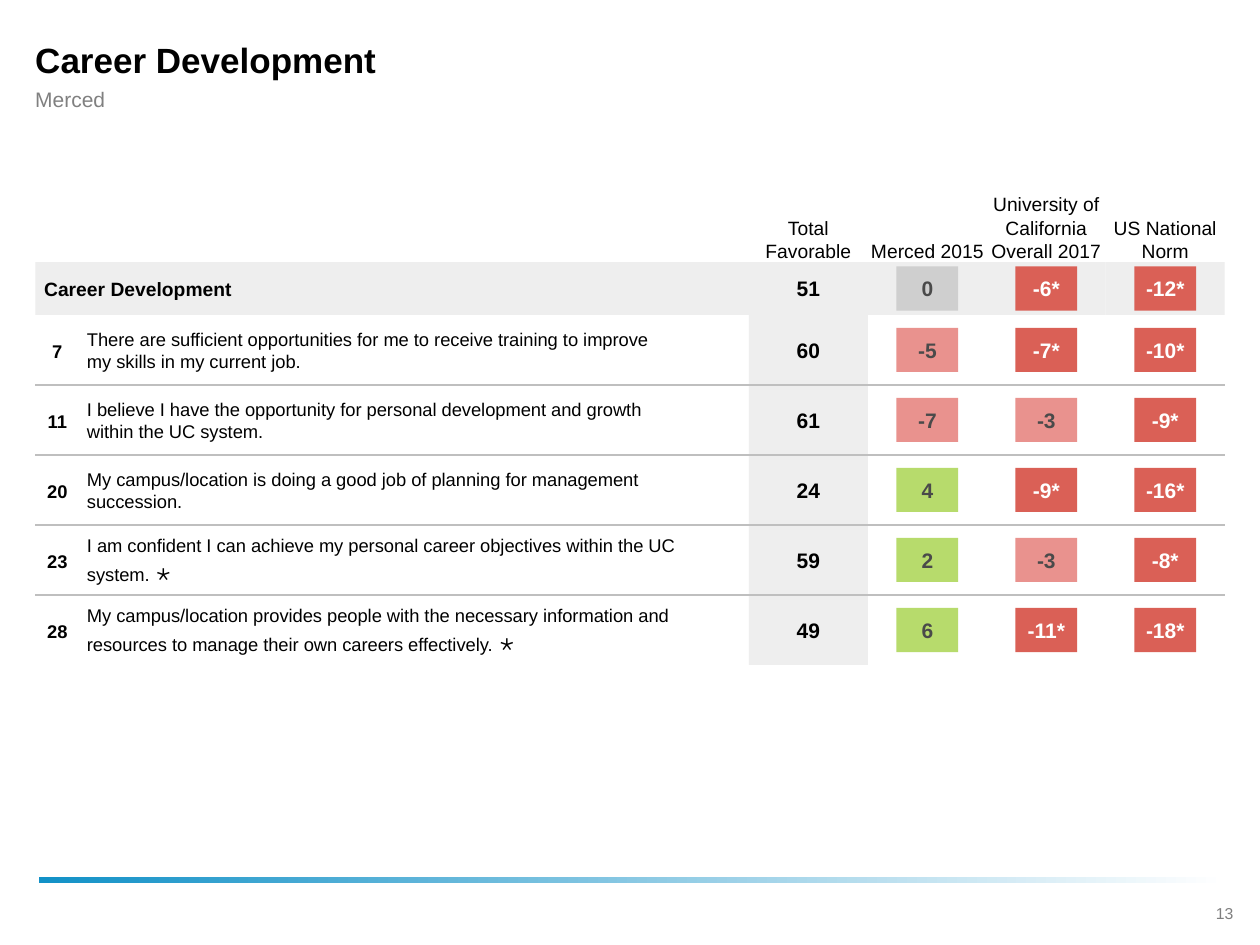
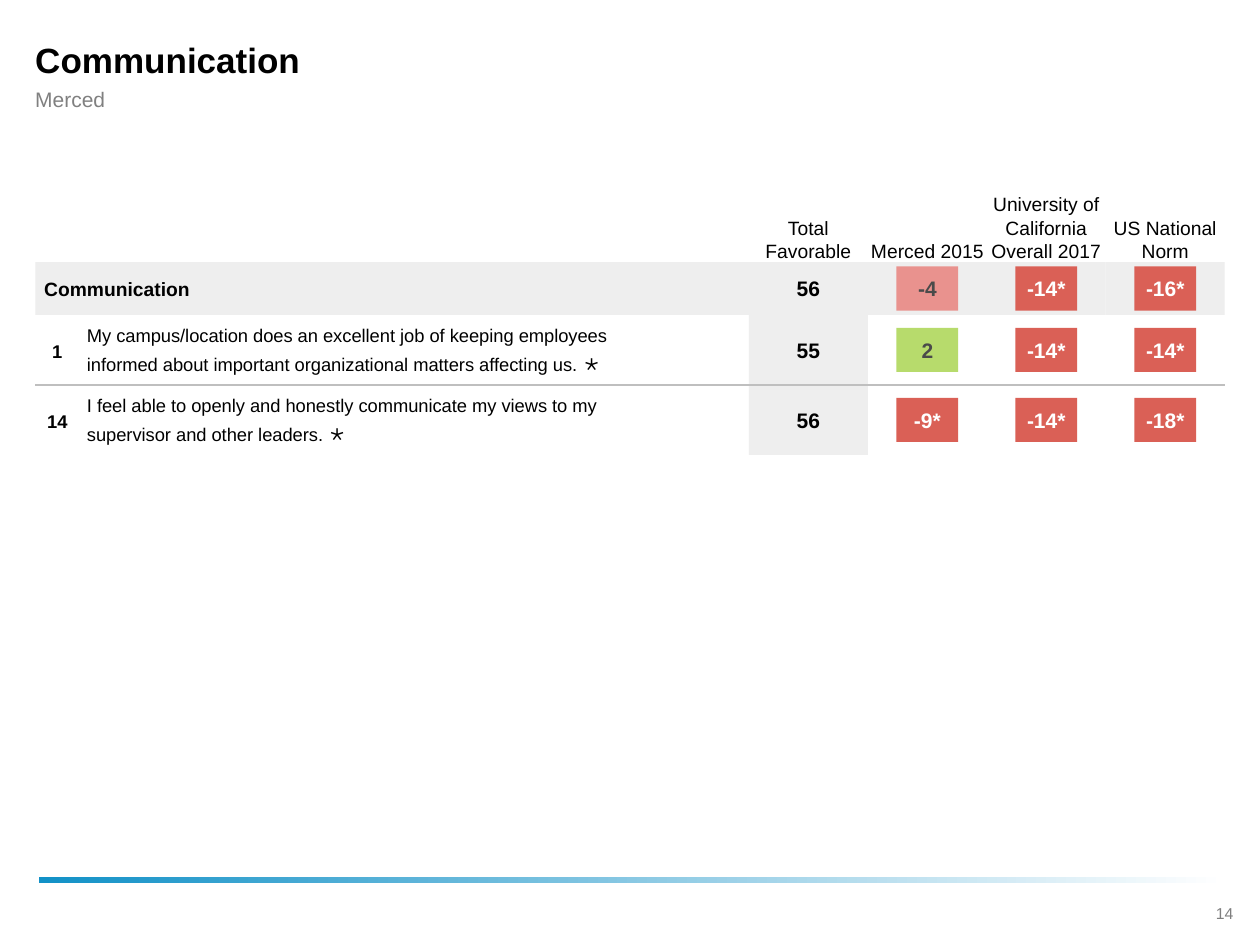
from collections import namedtuple

from pptx import Presentation
from pptx.dml.color import RGBColor
from pptx.enum.shapes import MSO_CONNECTOR as Connector, MSO_SHAPE as Shape
from pptx.enum.text import MSO_ANCHOR as Anchor, PP_ALIGN as Align
from pptx.oxml.ns import qn
from pptx.util import Inches, Pt
from lxml.etree import SubElement

FONT = "Arial"
COLORS = {
    "text": "000000",
    "subtitle": "808080",
    "page_number": "7F7F7F",
    "band": "EEEEEE",
    "rule": "BFBFBF",
    "accent": "1291C7",
    "white": "FFFFFF",
    "tile_text": "4A4A4A",
    "neutral": "CFCFCF",
    "above": "B7DB6C",
    "below": "E9928E",
    "far_below": "DA6056",
}

Box = namedtuple("Box", "left top width height")
Question = namedtuple("Question", "number text starred scores")

PAGE_BOX = Box(0.28, 0.28, 9.44, 6.73)
SCORES_BOX = Box(0.28, 0.97, 9.44, 5.5)
FOOTER_BOX = Box(0.31, 6.96, 9.42, 0.41)

# The score grid: ten column units, the last four of them hold scores
COLUMN_UNITS = 10
LABEL_UNITS = 6
HEADING_HEIGHT = 1.11
SUMMARY_HEIGHT = 0.42
ROW_HEIGHT = 5 / 9
TILE_WIDTH, TILE_HEIGHT = 0.49, 0.35

HEADINGS = ["Total Favorable", "Merced 2015",
            "University of California Overall 2017", "US National Norm"]

TOPICS = [
    (13, "Career Development", ["51", "0", "-6*", "-12*"], [
        Question("7", "There are sufficient opportunities for me to receive "
                 "training to improve my skills in my current job.",
                 False, ["60", "-5", "-7*", "-10*"]),
        Question("11", "I believe I have the opportunity for personal "
                 "development and growth within the UC system.",
                 False, ["61", "-7", "-3", "-9*"]),
        Question("20", "My campus/location is doing a good job of planning "
                 "for management succession.",
                 False, ["24", "4", "-9*", "-16*"]),
        Question("23", "I am confident I can achieve my personal career "
                 "objectives within the UC system.",
                 True, ["59", "2", "-3", "-8*"]),
        Question("28", "My campus/location provides people with the necessary "
                 "information and resources to manage their own careers "
                 "effectively.",
                 True, ["49", "6", "-11*", "-18*"]),
    ]),
    (14, "Communication", ["56", "-4", "-14*", "-16*"], [
        Question("1", "My campus/location does an excellent job of keeping "
                 "employees informed about important organizational matters "
                 "affecting us.",
                 True, ["55", "2", "-14*", "-14*"]),
        Question("14", "I feel able to openly and honestly communicate my "
                 "views to my supervisor and other leaders.",
                 True, ["56", "-9*", "-14*", "-18*"]),
    ]),
]


def color(name):
    return RGBColor.from_string(COLORS[name])


def lengths(box):
    return [Inches(value) for value in box]


def add_run(paragraph, text, size, color_name="text", bold=False):
    run = paragraph.add_run()
    run.text = text
    run.font.name = FONT
    run.font.size = Pt(size)
    run.font.bold = bold
    run.font.color.rgb = color(color_name)


def set_frame(shape, insets, anchor, align, wrap=True):
    """Prepare the text frame of a shape and return its first paragraph."""
    frame = shape.text_frame
    frame.word_wrap = wrap
    frame.vertical_anchor = anchor
    (frame.margin_left, frame.margin_top,
     frame.margin_right, frame.margin_bottom) = lengths(insets)
    paragraph = frame.paragraphs[0]
    paragraph.alignment = align
    return paragraph


def add_text(slide, box, text, size, color_name="text", bold=False,
             align=Align.LEFT, anchor=Anchor.MIDDLE, insets=(0, 0, 0, 0)):
    shape = slide.shapes.add_textbox(*lengths(box))
    paragraph = set_frame(shape, insets, anchor, align)
    add_run(paragraph, text, size, color_name, bold)
    return paragraph


def add_rectangle(slide, box, color_name):
    shape = slide.shapes.add_shape(Shape.RECTANGLE, *lengths(box))
    shape.shadow.inherit = False
    shape.line.fill.background()
    shape.fill.solid()
    shape.fill.fore_color.rgb = color(color_name)
    return shape


def add_rule(slide, left, right, y):
    rule = slide.shapes.add_connector(
        Connector.STRAIGHT, Inches(left), Inches(y), Inches(right), Inches(y))
    rule.line.color.rgb = color("rule")
    rule.line.width = Pt(0.75)
    SubElement(rule.element.spPr, qn("a:effectLst"))


def centered(cell, width, height):
    return Box(cell.left + (cell.width - width) / 2,
               cell.top + (cell.height - height) / 2, width, height)


def column_cells(box, top, height):
    """Return the label cell and the score cells of one row of the grid."""
    unit = box.width / COLUMN_UNITS
    label = Box(box.left, top, LABEL_UNITS * unit, height)
    cells = [Box(box.left + index * unit, top, unit, height)
             for index in range(LABEL_UNITS, COLUMN_UNITS)]
    return label, cells


def tile_color(score):
    if score.endswith("*"):
        return "far_below"
    value = int(score)
    if value == 0:
        return "neutral"
    return "above" if value > 0 else "below"


def add_tile(slide, cell, score):
    fill = tile_color(score)
    tile = add_rectangle(slide, centered(cell, TILE_WIDTH, TILE_HEIGHT), fill)
    paragraph = set_frame(tile, (0, 0.05, 0, 0.05), Anchor.MIDDLE,
                          Align.CENTER, wrap=False)
    text_color = "white" if fill == "far_below" else "tile_text"
    add_run(paragraph, score, 12, text_color, bold=True)


def add_scores(slide, cells, scores):
    favorable = centered(cells[0], cells[0].width, 0.19)
    add_text(slide, favorable, scores[0], 12, bold=True, align=Align.CENTER)
    for cell, score in zip(cells[1:], scores[1:]):
        add_tile(slide, cell, score)


def add_footer(slide, box, page_number):
    # Fading bar
    bar = add_rectangle(slide, box._replace(height=0.05), "accent")
    bar.fill.gradient()
    bar.fill.gradient_angle = 0
    for stop, name in zip(bar.fill.gradient_stops, ["accent", "white"]):
        stop.color.rgb = color(name)
    # Page number
    number_box = Box(box.left + 9.15, box.top + 0.16, 0.52, 0.25)
    add_text(slide, number_box, str(page_number), 9, "page_number",
             align=Align.CENTER, anchor=Anchor.TOP,
             insets=(0.1, 0.05, 0.1, 0.05))


def add_title(slide, box, title, subtitle):
    insets = (0, 0, 0.35, 0)
    add_text(slide, box._replace(height=0.38), title, 20, bold=True,
             insets=insets)
    add_text(slide, box._replace(top=box.top + 0.4, height=0.21), subtitle,
             12, "subtitle", insets=insets)


def add_question(slide, row, cells, question):
    number_box = Box(row.left, row.top + 0.18, 0.35, 0.22)
    add_text(slide, number_box, question.number, 10.5, bold=True,
             align=Align.CENTER)
    text_box = Box(row.left + 0.34, row.top + 0.05, 5.1, 0.46)
    paragraph = add_text(slide, text_box, question.text, 10.5,
                         insets=(0.07, 0, 0.35, 0))
    if question.starred:
        add_run(paragraph, " ⋆", 14)
    add_scores(slide, cells, question.scores)


def add_score_grid(slide, box, topic, summary, questions):
    summary_top = box.top + HEADING_HEIGHT
    rows_top = summary_top + SUMMARY_HEIGHT
    _, heading_cells = column_cells(box, box.top, HEADING_HEIGHT)
    label, summary_cells = column_cells(box, summary_top, SUMMARY_HEIGHT)
    rows = [column_cells(box, rows_top + index * ROW_HEIGHT, ROW_HEIGHT)
            for index in range(len(questions))]

    # Shaded summary row and first score column
    shaded = [cells[0] for _, cells in rows] + summary_cells + [label]
    for cell in shaded:
        add_rectangle(slide, cell, "band")

    # Column headings
    for cell, heading in zip(heading_cells, HEADINGS):
        add_text(slide, cell, heading, 11, align=Align.CENTER,
                 anchor=Anchor.BOTTOM)

    # Summary row
    add_text(slide, label, topic, 11, bold=True, insets=(0.07, 0, 0.07, 0))
    add_scores(slide, summary_cells, summary)

    # Question rows, with a rule between neighbours
    for index, ((row, cells), question) in enumerate(zip(rows, questions)):
        if index:
            add_rule(slide, box.left, box.left + box.width, row.top)
        add_question(slide, row, cells, question)


def add_topic_slide(presentation, page_number, topic, summary, questions):
    slide = presentation.slides.add_slide(presentation.slide_layouts[6])
    add_footer(slide, FOOTER_BOX, page_number)
    add_title(slide, PAGE_BOX, topic, "Merced")
    add_score_grid(slide, SCORES_BOX, topic, summary, questions)


def main():
    presentation = Presentation()
    presentation.slide_width = Inches(10)
    presentation.slide_height = Inches(7.5)
    for topic in TOPICS:
        add_topic_slide(presentation, *topic)
    presentation.save("out.pptx")


if __name__ == "__main__":
    main()
